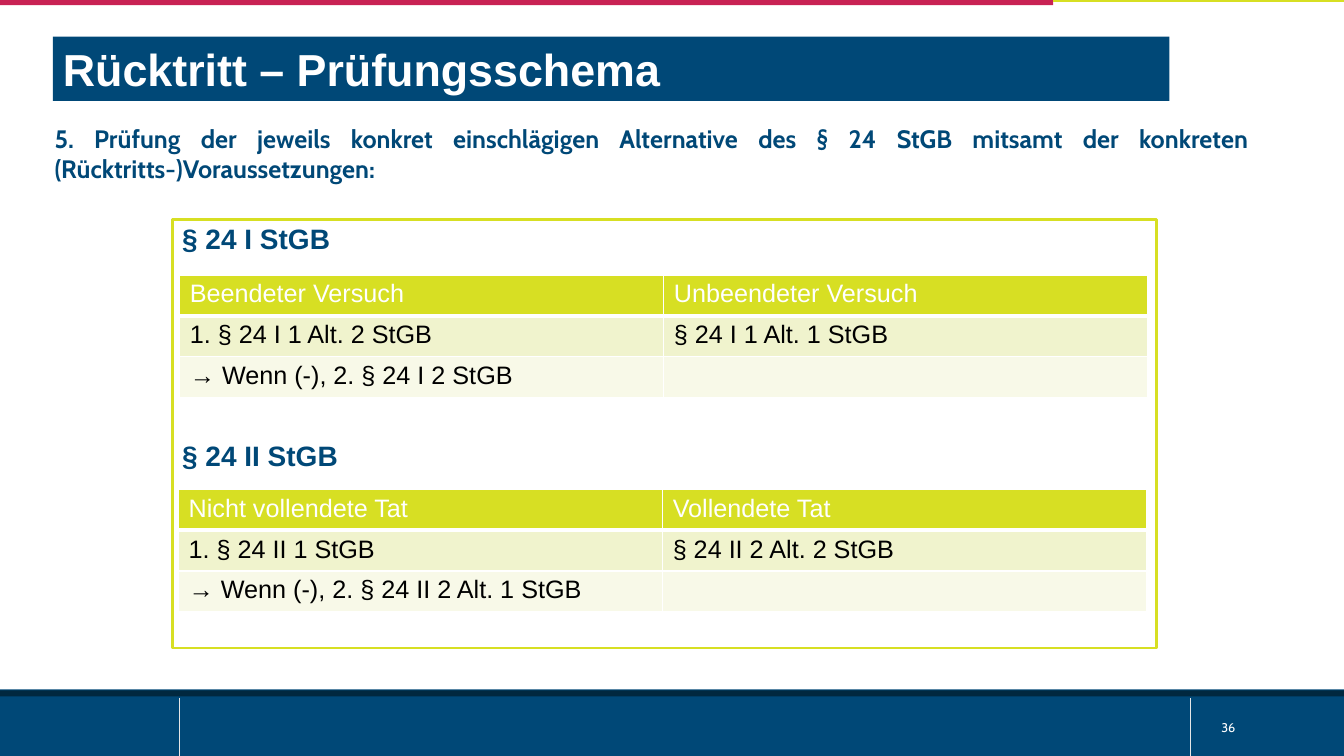
from lxml.etree import SubElement
from pptx import Presentation
from pptx.dml.color import RGBColor
from pptx.enum.shapes import MSO_CONNECTOR, MSO_SHAPE
from pptx.enum.text import MSO_ANCHOR, MSO_AUTO_SIZE, PP_ALIGN
from pptx.oxml.ns import qn
from pptx.util import Cm, Pt

BLUE = RGBColor(0x00, 0x48, 0x77)
NAVY = RGBColor(0x01, 0x28, 0x3F)
RED = RGBColor(0xC8, 0x22, 0x54)
LIME = RGBColor(0xD7, 0xDF, 0x23)
LIME_MID = RGBColor(0xF0, 0xF3, 0xCD)
LIME_PALE = RGBColor(0xF8, 0xF9, 0xE8)
GREY = RGBColor(0xE6, 0xE6, 0xE6)
WHITE = RGBColor(0xFF, 0xFF, 0xFF)
BLACK = RGBColor(0x00, 0x00, 0x00)

TITLE = "Rücktritt – Prüfungsschema"
INTRO = ("5. Prüfung der jeweils konkret einschlägigen Alternative des § 24 StGB "
         "mitsamt der konkreten (Rücktritts-)Voraussetzungen:")
PAGE = "36"
HEADINGS = [("§ 24 I StGB", 0), ("§ 24 II StGB", 132.5)]
TABLES = [
    (4.53, 6.93, [
        ("Beendeter Versuch", "Unbeendeter Versuch"),
        ("1. § 24 I 1 Alt. 2 StGB", "§ 24 I 1 Alt. 1 StGB"),
        ("→ Wenn (-), 2. § 24 I 2 StGB", ""),
    ]),
    (4.5, 12.33, [
        ("Nicht vollendete Tat", "Vollendete Tat"),
        ("1. § 24 II 1 StGB", "§ 24 II 2 Alt. 2 StGB"),
        ("→ Wenn (-), 2. § 24 II 2 Alt. 1 StGB", ""),
    ]),
]
ROW_STYLES = [(LIME, WHITE, 3), (LIME_MID, BLACK, 1), (LIME_PALE, BLACK, 1)]
COL_W, ROW_H = 12.2, 1.03
BANDS = [
    (0, 17.37, 33.87, 1.68, BLUE),
    (0, 17.4, 33.87, 0.15, NAVY),
    (0, 0, 26.54, 0.13, RED),
    (26.54, 0, 7.33, 0.05, LIME),
]
DIVIDERS = [4.52, 30.0]

TITLE_FONT = {"name": "Arial", "size": Pt(32), "bold": True}
INTRO_FONT = {"name": "Cabin", "size": Pt(18), "bold": True}
HEADING_FONT = {"name": "Arial", "size": Pt(20), "bold": True}
CELL_FONT = {"name": "Arial", "size": Pt(18), "bold": False}
PAGE_FONT = {"name": "Cabin", "size": Pt(9)}


def write(p, text, font, color):
    r = p.add_run()
    r.text = text
    for key, value in font.items():
        setattr(r.font, key, value)
    r.font.color.rgb = color


def place(sp, *box):
    for key, value in zip(("left", "top", "width", "height"), box):
        setattr(sp, key, Cm(value))


def add_rect(s, box, fill):
    sp = s.shapes.add_shape(MSO_SHAPE.RECTANGLE, *map(Cm, box))
    sp.shadow.inherit = False
    sp.fill.solid()
    sp.fill.fore_color.rgb = fill
    sp.line.fill.background()
    return sp


def add_divider(s, x):
    line = s.shapes.add_connector(MSO_CONNECTOR.STRAIGHT, Cm(x), Cm(17.6), Cm(x), Cm(19.05))
    line.line.color.rgb = GREY
    line.line.width = Pt(0.5)
    SubElement(line._element.spPr, qn("a:effectLst"))


def set_borders(cell, bottom):
    tcPr = cell._tc.get_or_add_tcPr()
    for side, width in (("L", 1), ("R", 1), ("T", 1), ("B", bottom)):
        ln = SubElement(tcPr, qn(f"a:ln{side}"), w=str(Pt(width)))
        fill = SubElement(ln, qn("a:solidFill"))
        SubElement(fill, qn("a:srgbClr"), val=str(WHITE))


def add_scheme(s, left, top, rows):
    n_rows, n_cols = len(rows), len(rows[0])
    table = s.shapes.add_table(n_rows, n_cols, Cm(left), Cm(top),
                               Cm(COL_W * n_cols), Cm(ROW_H * n_rows)).table
    for col in table.columns:
        col.width = Cm(COL_W)
    for i, (texts, (fill, color, bottom)) in enumerate(zip(rows, ROW_STYLES)):
        table.rows[i].height = Cm(ROW_H)
        for j, text in enumerate(texts):
            cell = table.cell(i, j)
            set_borders(cell, bottom)
            cell.fill.solid()
            cell.fill.fore_color.rgb = fill
            if text:
                write(cell.text_frame.paragraphs[0], text, CELL_FONT, color)


def main():
    prs = Presentation()
    prs.slide_width, prs.slide_height = Cm(33.87), Cm(19.05)
    s = prs.slides.add_slide(prs.slide_layouts[1])

    for *box, fill in BANDS:
        add_rect(s, box, fill)
    for x in DIVIDERS:
        add_divider(s, x)

    title, body = s.shapes.title, s.placeholders[1]
    place(title, 1.33, 0.92, 28.14, 1.62)
    title.fill.solid()
    title.fill.fore_color.rgb = BLUE
    place(body, 1.12, 2.97, 30.6, 1.8)
    for sp, text, font, color, align, anchor in (
        (title, TITLE, TITLE_FONT, WHITE, PP_ALIGN.LEFT, MSO_ANCHOR.MIDDLE),
        (body, INTRO, INTRO_FONT, BLUE, PP_ALIGN.JUSTIFY, MSO_ANCHOR.TOP),
    ):
        tf = sp.text_frame
        tf.auto_size = MSO_AUTO_SIZE.NONE
        tf.vertical_anchor = anchor
        p = tf.paragraphs[0]
        p.alignment = align
        p.space_before = Pt(0)
        write(p, text, font, color)
    pPr = body.text_frame.paragraphs[0]._p.get_or_add_pPr()
    pPr.set("marL", "0")
    pPr.set("indent", "0")
    SubElement(pPr, qn("a:buNone"))

    frame = add_rect(s, (4.34, 5.53, 24.8, 10.8), WHITE)
    frame.line.color.rgb = LIME
    frame.line.width = Pt(2)
    tf = frame.text_frame
    tf.vertical_anchor = MSO_ANCHOR.TOP
    for i, (text, gap) in enumerate(HEADINGS):
        p = tf.add_paragraph() if i else tf.paragraphs[0]
        p.alignment = PP_ALIGN.JUSTIFY
        p.line_spacing = 0.94
        p.space_before = Pt(gap)
        write(p, text, HEADING_FONT, BLUE)

    for left, top, rows in TABLES:
        add_scheme(s, left, top, rows)

    tf = s.shapes.add_textbox(Cm(30.53), Cm(17.83), Cm(3.3), Cm(1.02)).text_frame
    tf.word_wrap = True
    tf.vertical_anchor = MSO_ANCHOR.MIDDLE
    write(tf.paragraphs[0], PAGE, PAGE_FONT, WHITE)

    prs.save("out.pptx")


if __name__ == "__main__":
    main()
